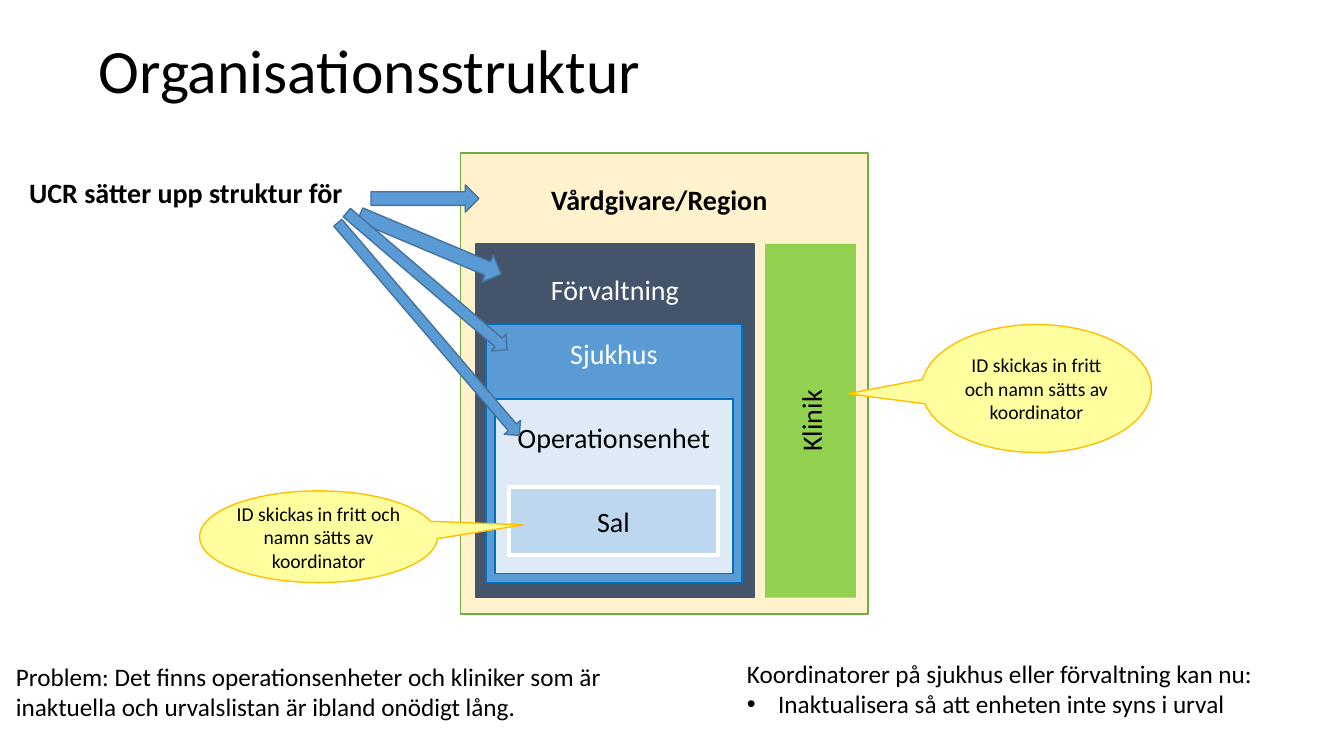
from math import atan2, degrees, hypot

from pptx import Presentation
from pptx.dml.color import RGBColor
from pptx.enum.shapes import MSO_SHAPE as Preset
from pptx.enum.text import MSO_ANCHOR as Anchor, PP_ALIGN as Align
from pptx.oxml.ns import qn
from pptx.util import Inches, Pt
from lxml.etree import SubElement

FONT = "Calibri"
BLACK = RGBColor(0x00, 0x00, 0x00)
WHITE = RGBColor(0xFF, 0xFF, 0xFF)
CREAM = RGBColor(0xFF, 0xF2, 0xCC)
GREEN_EDGE = RGBColor(0x70, 0xAD, 0x47)
SLATE = RGBColor(0x44, 0x54, 0x6A)
LIME = RGBColor(0x92, 0xD0, 0x50)
BLUE = RGBColor(0x5B, 0x9B, 0xD5)
BLUE_EDGE = RGBColor(0x00, 0x70, 0xC0)
ARROW_EDGE = RGBColor(0x43, 0x73, 0x9E)
PALE_BLUE = RGBColor(0xDE, 0xEB, 0xF7)
LIGHT_BLUE = RGBColor(0xBD, 0xD7, 0xEE)
YELLOW = RGBColor(0xFF, 0xFF, 0x9F)
GOLD = RGBColor(0xFF, 0xC0, 0x00)

CALLOUT_TEXT = "ID skickas in fritt och namn sätts av koordinator"


def style_font(paragraph, size, color=BLACK, bold=False):
    font = paragraph.font
    font.name, font.size, font.bold = FONT, Pt(size), bold
    font.color.rgb = color


def add_preset(slide, preset, box, fill, edge=None, edge_width=1):
    shape = slide.shapes.add_shape(preset, *map(Inches, box))
    shape.shadow.inherit = False
    shape.fill.solid()
    shape.fill.fore_color.rgb = fill
    if edge is None:
        shape.line.fill.background()
    else:
        shape.line.color.rgb = edge
        shape.line.width = Pt(edge_width)
    return shape


def write_centred(shape, text, size, color=BLACK, bold=False):
    frame = shape.text_frame
    frame.word_wrap = True
    frame.vertical_anchor = Anchor.MIDDLE
    frame.text = text
    frame.paragraphs[0].alignment = Align.CENTER
    style_font(frame.paragraphs[0], size, color, bold)
    return frame


def add_note(slide, box, lines, size, bold=False, wrap=True):
    frame = slide.shapes.add_textbox(*map(Inches, box)).text_frame
    frame.word_wrap = wrap
    frame.text = "\n".join(lines)
    for paragraph in frame.paragraphs:
        style_font(paragraph, size, bold=bold)
    return frame


def add_title(slide, box):
    frame = add_note(slide, box, ["Organisationsstruktur"], 44)
    frame.vertical_anchor = Anchor.MIDDLE
    frame.paragraphs[0].line_spacing = 0.9


def add_level(slide, box, name, heading_top, fill, edge, color=BLACK, bold=False):
    """Draw one enclosing level with its heading at the given depth."""
    level = add_preset(slide, Preset.RECTANGLE, box, fill, edge)
    frame = write_centred(level, name, 20, color, bold)
    frame.vertical_anchor = Anchor.TOP
    frame.margin_top = Inches(heading_top)
    return frame


def add_organisation(slide, box):
    """Nest the levels of the organisation inside the region's box."""
    left, top, width, height = box
    region = add_level(slide, box, "Vårdgivare/Region", 0.29, CREAM, GREEN_EDGE, bold=True)
    region.margin_right = Inches(0.2)
    add_level(slide, (left + 0.15, top + 0.9, 2.76, 3.51), "Förvaltning", 0.28,
              SLATE, SLATE, WHITE)
    add_level(slide, (left + 0.25, top + 1.7, 2.54, 2.56), "Sjukhus", 0.12,
              BLUE, BLUE_EDGE, WHITE)
    add_level(slide, (left + 0.34, top + 2.44, 2.36, 1.73), "Operationsenhet", 0.21,
              PALE_BLUE, BLUE_EDGE)
    room = add_preset(slide, Preset.RECTANGLE, (left + 0.48, top + 3.31, 2.07, 0.68),
                      LIGHT_BLUE, WHITE, 3)
    write_centred(room, "Sal", 20)
    clinic = add_preset(slide, Preset.RECTANGLE,
                        (left + width - 1.02, top + 0.9, 0.9, 3.51), LIME)
    frame = write_centred(clinic, "Klinik", 20)
    frame._txBody.bodyPr.set("vert", "vert270")


def add_callout(slide, box, tip_x, tip_y):
    """Draw a balloon; the tip is a share of its size from its centre."""
    callout = add_preset(slide, Preset.OVAL_CALLOUT, box, YELLOW, GOLD)
    callout.adjustments[0], callout.adjustments[1] = tip_x, tip_y
    frame = write_centred(callout, CALLOUT_TEXT, 14)
    frame.margin_left = frame.margin_right = 0
    frame.margin_top = frame.margin_bottom = 0


def add_arrow(slide, tail, tip, thickness):
    dx, dy = tip[0] - tail[0], tip[1] - tail[1]
    length = hypot(dx, dy)
    box = ((tail[0] + tip[0] - length) / 2, (tail[1] + tip[1] - thickness) / 2,
           length, thickness)
    arrow = add_preset(slide, Preset.RIGHT_ARROW, box, BLUE, ARROW_EDGE)
    arrow.rotation = degrees(atan2(dy, dx))


def add_setup(slide, box):
    """Place the setup label and its arrows to the four levels."""
    add_note(slide, box, ["UCR sätter upp struktur för"], 20, bold=True, wrap=False)
    right, top = box[0] + box[2], box[1]
    arrows = [
        ((0.15, 0.28), (1.22, 0.28), 0.27),
        ((0.04, 0.44), (1.44, 1.03), 0.29),
        ((-0.09, 0.42), (1.5, 1.78), 0.22),
        ((-0.18, 0.52), (1.62, 2.63), 0.21),
    ]
    for tail, tip, thickness in arrows:
        add_arrow(slide, (right + tail[0], top + tail[1]),
                  (right + tip[0], top + tip[1]), thickness)


def add_coordinator_note(slide, box):
    frame = add_note(slide, box, ["Koordinatorer på sjukhus eller förvaltning kan nu:"],
                     18, wrap=False)
    item = frame.add_paragraph()
    item.text = "Inaktualisera så att enheten inte syns i urval"
    properties = item._p.get_or_add_pPr()
    properties.set("marL", str(Inches(0.31)))
    properties.set("indent", str(-Inches(0.31)))
    SubElement(properties, qn("a:buFont")).set("typeface", "Arial")
    SubElement(properties, qn("a:buChar")).set("char", "•")
    style_font(item, 18)


def main():
    prs = Presentation()
    prs.slide_width, prs.slide_height = Inches(13.33), Inches(7.5)
    slide = prs.slides.add_slide(prs.slide_layouts[6])
    add_title(slide, (0.88, 0, 11.5, 1.45))
    add_organisation(slide, (4.57, 1.52, 4.04, 4.57))
    add_callout(slide, (9.14, 3.22, 2.28, 1.27), -0.82, 0.04)
    add_callout(slide, (1.98, 4.87, 2.36, 0.91), 0.86, -0.13)
    add_setup(slide, (0.19, 1.69, 3.34, 0.44))
    add_coordinator_note(slide, (7.31, 6.48, 5.27, 0.71))
    add_note(slide, (0.06, 6.51, 6.67, 0.71),
             ["Problem: Det finns operationsenheter och kliniker som är "
              "inaktuella och urvalslistan är ibland onödigt lång."], 18)
    prs.save("out.pptx")


if __name__ == "__main__":
    main()
